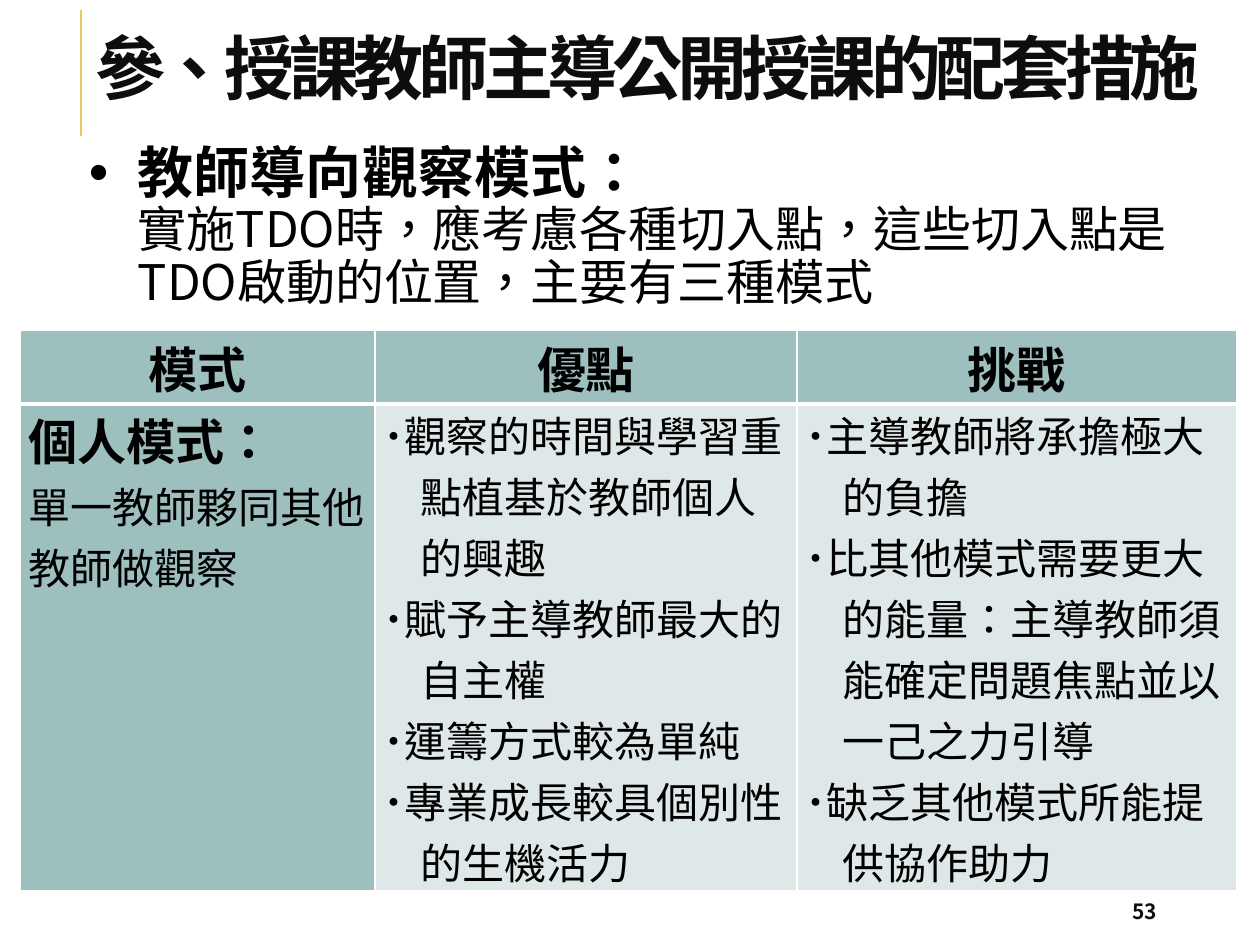
from lxml import etree
from pptx import Presentation
from pptx.dml.color import RGBColor
from pptx.enum.lang import MSO_LANGUAGE_ID
from pptx.enum.shapes import MSO_CONNECTOR
from pptx.enum.text import MSO_ANCHOR, PP_ALIGN
from pptx.oxml.ns import qn
from pptx.util import Pt

SCALE = 914400 / 126
STRAIGHT = MSO_CONNECTOR.STRAIGHT
MIDDLE, TOP = MSO_ANCHOR.MIDDLE, MSO_ANCHOR.TOP
LEFT, CENTER = PP_ALIGN.LEFT, PP_ALIGN.CENTER
TAIWAN = MSO_LANGUAGE_ID.TRADITIONAL_CHINESE

BLACK = RGBColor(0x00, 0x00, 0x00)
INK = RGBColor(0x0D, 0x0D, 0x0D)
GOLD = RGBColor(0xE3, 0xCC, 0x5A)
TEAL = RGBColor(0x9D, 0xBF, 0xBE)
PALE = RGBColor(0xDF, 0xE8, 0xE8)
WHITE = RGBColor(0xFF, 0xFF, 0xFF)

SANS, SANS_TC, SERIF = "Noto Sans CJK SC", "Noto Sans CJK TC", "Times New Roman"

COLS, ROWS = (355, 422, 440), (74, 487)
HEADS = ("模式", "優點", "挑戰")
MODE = ("個人模式：", "單一教師夥同其他教師做觀察")
POINTS = (
    ("˙觀察的時間與學習重點植基於教師個人的興趣",
     "˙賦予主導教師最大的自主權",
     "˙運籌方式較為單純",
     "˙專業成長較具個別性的生機活力"),
    ("˙主導教師將承擔極大的負擔",
     "˙比其他模式需要更大的能量：主導教師須能確定問題焦點並以一己之力引導",
     "˙缺乏其他模式所能提供協作助力"),
)


def px(n):
    return round(n * SCALE)


def child(parent, tag, **attrs):
    return etree.SubElement(parent, qn(tag), attrs)


def add_run(para, text, size, bold=False, color=BLACK, face=SANS, east=None):
    run = para.add_run()
    run.text = text
    font = run.font
    font.size, font.bold, font.name = Pt(size), bold, face
    font.color.rgb = color
    font.language_id = TAIWAN
    child(font._element, "a:ea", typeface=east or face)
    return run


def hang(para, indent):
    props = para._p.get_or_add_pPr()
    props.set("marL", str(px(indent)))
    props.set("indent", str(-px(indent)))
    return props


def add_box(slide, x, y, w, h, anchor=TOP, inset=None):
    frame = slide.shapes.add_textbox(px(x), px(y), px(w), px(h)).text_frame
    frame.word_wrap = True
    frame.vertical_anchor = anchor
    if inset is not None:
        frame.margin_left = frame.margin_right = px(inset)
        frame.margin_top = frame.margin_bottom = px(inset)
    return frame


def add_rule(slide, x, top, bottom):
    rule = slide.shapes.add_connector(STRAIGHT, px(x), px(bottom), px(x), px(top))
    rule.line.color.rgb = GOLD
    rule.line.width = Pt(1.5)
    child(rule._element.spPr, "a:effectLst")


def add_title(slide):
    para = add_box(slide, 83, 11, 1138, 127, MIDDLE).paragraphs[0]
    para.line_spacing = 0.8
    run = add_run(para, "參、授課教師主導公開授課的配套措施", 40, True, INK, SERIF, SANS_TC)
    run.font._element.set("spc", "-300")


def add_intro(slide):
    para = add_box(slide, 83, 139, 1094, 180, inset=6).paragraphs[0]
    props = hang(para, 49)
    child(child(props, "a:buClr"), "a:srgbClr", val=str(BLACK))
    child(props, "a:buFont", typeface="Arial")
    child(props, "a:buChar", char="•")
    para.line_spacing = 0.9
    para.space_after = Pt(2)
    add_run(para, "教師導向觀察模式", 32, True)
    add_run(para, "：", 32, True, face=SANS_TC)
    para.add_line_break()
    add_run(para, "實施TDO時，應考慮各種切入點，這些切入點是TDO啟動的位置，主要有三種模式", 28)


def style_cell(cell, fill, anchor, top, bottom):
    """Set margins, fill and white borders; top and bottom are in points."""
    cell.margin_left = cell.margin_right = px(9)
    cell.margin_top = cell.margin_bottom = 0
    cell.vertical_anchor = anchor
    props = cell._tc.get_or_add_tcPr()
    for side, width in zip("LRTB", (1, 1, top, bottom)):
        line = child(props, f"a:ln{side}", w=str(Pt(width)))
        child(child(line, "a:solidFill"), "a:srgbClr", val=str(WHITE))
    cell.fill.solid()
    cell.fill.fore_color.rgb = fill


def fill_cell(cell, items, align=LEFT, indent=0):
    """Write one paragraph for each (text, size, bold) item."""
    frame = cell.text_frame
    for i, item in enumerate(items):
        para = frame.add_paragraph() if i else frame.paragraphs[0]
        para.alignment = align
        if indent:
            hang(para, indent)
        add_run(para, *item)


def add_modes(slide):
    table = slide.shapes.add_table(
        len(ROWS), len(COLS), px(20), px(330), px(sum(COLS)), px(sum(ROWS))).table
    for col, width in zip(table.columns, COLS):
        col.width = px(width)
    for row, height in zip(table.rows, ROWS):
        row.height = px(height)
    for i, head in enumerate(HEADS):
        style_cell(table.cell(0, i), TEAL, MIDDLE, 1, 3)
        fill_cell(table.cell(0, i), [(head, 28, True)], CENTER)
        style_cell(table.cell(1, i), PALE if i else TEAL, TOP, 3, 1)
    name, note = MODE
    fill_cell(table.cell(1, 0), [(name, 28, True), (note, 24)])
    for i, points in enumerate(POINTS, 1):
        fill_cell(table.cell(1, i), [(text, 24) for text in points], indent=37)


def add_number(slide):
    para = add_box(slide, 1120, 892, 101, 38, MIDDLE).paragraphs[0]
    add_run(para, "53", 12, True, INK)


def main():
    deck = Presentation()
    deck.slide_width, deck.slide_height = px(1260), px(945)
    slide = deck.slides.add_slide(deck.slide_layouts[6])
    add_rule(slide, 81, 10, 136)
    add_number(slide)
    add_intro(slide)
    add_modes(slide)
    add_title(slide)
    deck.save("out.pptx")


if __name__ == "__main__":
    main()
